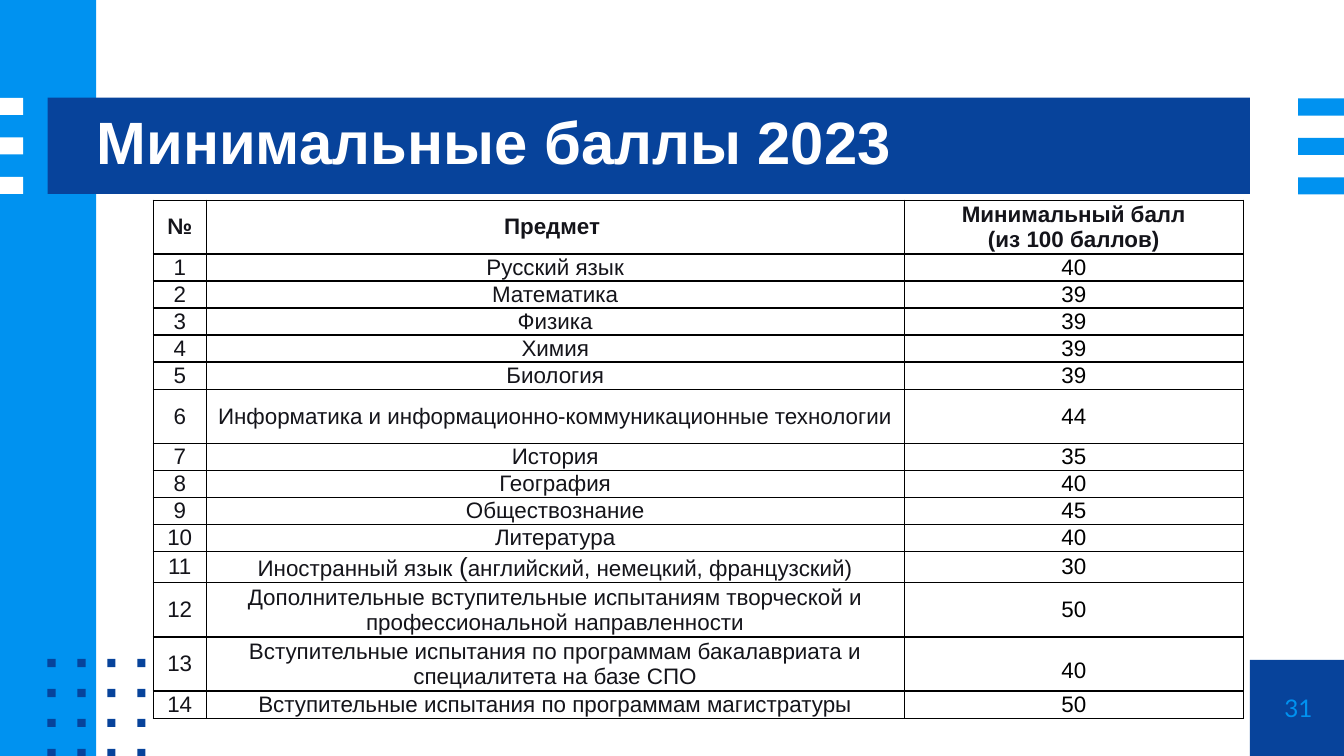
from lxml import etree
from pptx import Presentation
from pptx.dml.color import RGBColor
from pptx.enum import shapes, text
from pptx.oxml import ns
from pptx.util import Pt

C = {"navy": "07439B", "blue": "0092F0", "white": "FFFFFF",
     "ink": "14141A", "black": "000000"}

prs = Presentation()
prs.slide_width, prs.slide_height = Pt(720), Pt(405)
s = prs.slides.add_slide(prs.slide_layouts[6])


def add_rect(x, y, w, h, color):
    sp = s.shapes.add_shape(shapes.MSO_SHAPE.RECTANGLE, Pt(x), Pt(y), Pt(w), Pt(h))
    sp.shadow.inherit = False
    sp.fill.solid()
    sp.fill.fore_color.rgb = RGBColor.from_string(C[color])
    sp.line.fill.background()


def add_run(p, words, size, color, bold=False, font="Arial"):
    r = p.add_run()
    r.text = words
    r.font.size, r.font.bold, r.font.name = Pt(size), bold, font
    r.font.color.rgb = RGBColor.from_string(C[color])


# Page number square, side band and title bar
add_rect(669.6, 353.5, 51.8, 51.8, "navy")
add_rect(0, 0, 51.6, 405, "blue")
add_rect(25.5, 52.3, 644.1, 51.6, "navy")

# Stripes at both edges
for i in range(3):
    y = 52.4 + 21.15 * i
    add_rect(0, y, 12.4, 9.2, "white")
    add_rect(695.5, y + 0.3, 24.5, 9.2, "blue")

# Dot grid
for row in range(4):
    for col in range(4):
        add_rect(25.4 + 16.05 * col, 353 + 16.05 * row, 4.4, 4.4, "navy")

# Page number and title
for box, words, size, color, bold, font, align, spacing in [
    ((669.6, 353.5, 51.8, 51.8), "31", 13, "blue", False, "Lato", text.PP_ALIGN.CENTER, 1),
    ((51.8, 43.9, 617.8, 67.7), "Минимальные баллы 2023", 32, "white", True, "Arial",
     text.PP_ALIGN.LEFT, 0.9),
]:
    tf = s.shapes.add_textbox(*map(Pt, box)).text_frame
    tf.word_wrap = True
    tf.vertical_anchor = text.MSO_ANCHOR.MIDDLE
    tf.margin_left = tf.margin_right = tf.margin_top = tf.margin_bottom = 0
    p = tf.paragraphs[0]
    p.alignment, p.line_spacing = align, spacing
    add_run(p, words, size, color, bold, font)

# Score table: subject, minimum score
scores = [
    ("Русский язык", 40),
    ("Математика", 39),
    ("Физика", 39),
    ("Химия", 39),
    ("Биология", 39),
    ("Информатика и информационно-коммуникационные технологии", 44),
    ("История", 35),
    ("География", 40),
    ("Обществознание", 45),
    ("Литература", 40),
    ("Иностранный язык (английский, немецкий, французский)", 30),
    ("Дополнительные вступительные испытаниям творческой и "
     "профессиональной направленности", 50),
    ("Вступительные испытания по программам бакалавриата и "
     "специалитета на базе СПО", 40),
    ("Вступительные испытания по программам магистратуры", 50),
]
rows = [("№", "Предмет ", "Минимальный балл\n(из 100 баллов)")]
rows += [(str(n), subject, str(score)) for n, (subject, score) in enumerate(scores, 1)]
widths = [28.4, 374, 181.6]
row_h = 14.5
special_h = {0: 27, 6: 2 * row_h, 11: 16.6, 12: 2 * row_h, 13: 2 * row_h}
heights = [special_h.get(i, row_h) for i in range(len(rows))]

frame = s.shapes.add_table(len(rows), len(widths), Pt(82.1), Pt(107.2),
                           Pt(sum(widths)), Pt(sum(heights)))
table = frame.table
table.horz_banding = False
for column, w in zip(table.columns, widths):
    column.width = Pt(w)

for i, (row, h) in enumerate(zip(rows, heights)):
    table.rows[i].height = Pt(h)
    for j, words in enumerate(row):
        cell = table.cell(i, j)
        cell.vertical_anchor = text.MSO_ANCHOR.MIDDLE
        cell.margin_left = cell.margin_right = Pt(5.4)
        cell.margin_top = cell.margin_bottom = 0

        # Thin black borders, no fill
        tc_pr = cell._tc.get_or_add_tcPr()
        for side in ("lnL", "lnR", "lnT", "lnB"):
            ln = etree.SubElement(tc_pr, ns.qn("a:" + side), w=str(Pt(0.75)))
            fill = etree.SubElement(ln, ns.qn("a:solidFill"))
            etree.SubElement(fill, ns.qn("a:srgbClr"), val=C["black"])
        cell.fill.background()

        tf = cell.text_frame
        color = "black" if i and j == 2 else "ink"
        for k, line in enumerate(words.split("\n")):
            p = tf.add_paragraph() if k else tf.paragraphs[0]
            p.alignment = text.PP_ALIGN.CENTER
            if (i, j) == (13, 2):
                p.line_spacing = 1.5
            if (i, j) == (11, 1):
                # The opening bracket is set larger
                before, bracket, after = line.partition("(")
                parts = [(before, 12), (bracket, 14), (after, 12)]
            else:
                parts = [(line, 12)]
            for part, size in parts:
                add_run(p, part, size, color, bold=i == 0)

prs.save("out.pptx")
